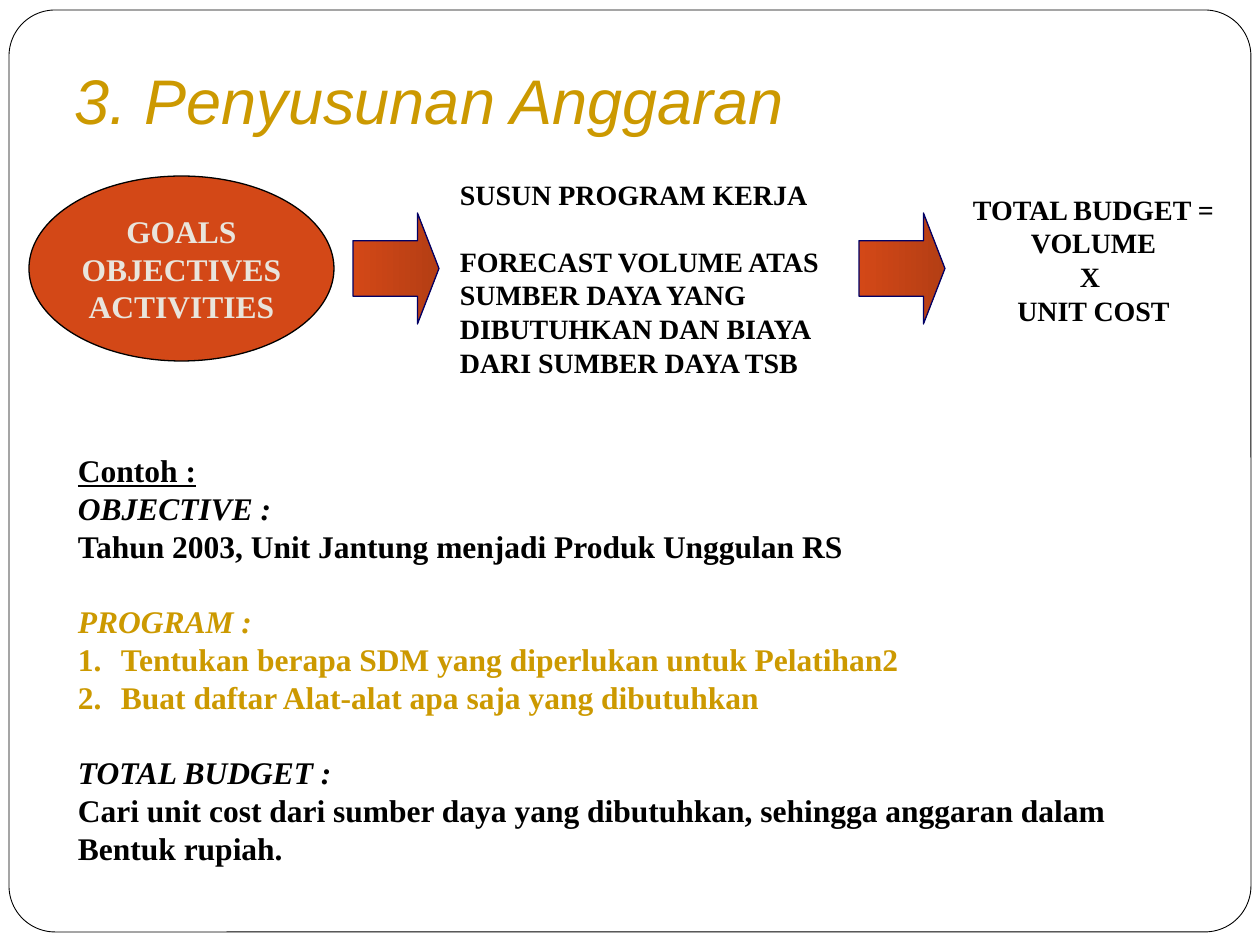
from pptx import Presentation
from pptx.dml.color import RGBColor
from pptx.enum.shapes import MSO_SHAPE
from pptx.enum.text import MSO_ANCHOR, PP_ALIGN
from pptx.util import Pt
from lxml.etree import SubElement
from pptx.oxml.ns import qn

PX = 914400 / 126
BLACK = RGBColor(0x00, 0x00, 0x00)
WHITE = RGBColor(0xFF, 0xFF, 0xFF)
GOLD = RGBColor(0xCC, 0x99, 0x00)
RUST = RGBColor(0xD3, 0x48, 0x17)
BROWN = RGBColor(0xB4, 0x3E, 0x14)
CREAM = RGBColor(0xE9, 0xE5, 0xDC)
NAVY = RGBColor(0x00, 0x00, 0x66)
SERIF = "Times New Roman"

# Content: each line is its text and the format that differs
TITLE = [("3. Penyusunan Anggaran", {"italic": True, "bold": False})]
GOALS = [("GOALS", {}), ("OBJECTIVES", {}), ("ACTIVITIES", {})]
WORK = [
    ("SUSUN PROGRAM KERJA", {}),
    ("FORECAST VOLUME ATAS", {"gap": 19.2}),
    ("SUMBER DAYA YANG", {}),
    ("DIBUTUHKAN DAN BIAYA", {}),
    ("DARI SUMBER DAYA TSB", {}),
]
BUDGET = [("TOTAL BUDGET =", {}), ("VOLUME", {}), ("X ", {}), ("UNIT COST", {})]
SAMPLE = [
    ("Contoh :", {"underline": True}),
    ("OBJECTIVE :", {"italic": True}),
    ("Tahun 2003, Unit Jantung menjadi Produk Unggulan RS", {}),
    ("PROGRAM :", {"italic": True, "color": GOLD, "gap": 21.6}),
    ("Tentukan berapa SDM yang diperlukan untuk Pelatihan2",
     {"color": GOLD, "number": True}),
    ("Buat daftar Alat-alat apa saja yang dibutuhkan",
     {"color": GOLD, "number": True}),
    ("TOTAL BUDGET :", {"italic": True, "gap": 21.6}),
    ("Cari unit cost dari sumber daya yang dibutuhkan, sehingga anggaran dalam", {}),
    ("Bentuk rupiah.", {}),
]
ARROWS = [353, 859]


def px(*values):
    return [round(v * PX) for v in values]


def write(frame, lines, size=18, font=SERIF, color=BLACK, align=PP_ALIGN.LEFT,
          anchor=MSO_ANCHOR.MIDDLE, wrap=True, bottom=6):
    frame.word_wrap = wrap
    frame.vertical_anchor = anchor
    frame.margin_left, frame.margin_right = px(12, 12)
    frame.margin_top, frame.margin_bottom = px(6, bottom)
    for i, (text, look) in enumerate(lines):
        para = frame.add_paragraph() if i else frame.paragraphs[0]
        para.alignment = align
        if "gap" in look:
            para.space_before = Pt(look["gap"])
        if look.get("number"):
            props = para._p.get_or_add_pPr()
            props.set("marL", str(px(43)[0]))
            props.set("indent", str(px(-43)[0]))
            SubElement(props, qn("a:buFont"), typeface="+mj-lt")
            SubElement(props, qn("a:buAutoNum"), type="arabicPeriod")
        run = para.add_run()
        run.text = text
        face = run.font
        face.name, face.size = font, Pt(size)
        face.bold = look.get("bold", True)
        face.italic = look.get("italic", False)
        face.underline = look.get("underline", False)
        face.color.rgb = look.get("color", color)


def draw(slide, kind, box, fill, line, width):
    shape = slide.shapes.add_shape(kind, *px(*box))
    shape.shadow.inherit = False
    shape.fill.solid()
    shape.fill.fore_color.rgb = fill
    shape.line.color.rgb = line
    shape.line.width = Pt(width)
    return shape


def note(slide, box, lines, **look):
    write(slide.shapes.add_textbox(*px(*box)).text_frame, lines, **look)


def main():
    deck = Presentation()
    deck.slide_width, deck.slide_height = px(1260, 945)
    slide = deck.slides.add_slide(deck.slide_layouts[6])

    # Frame and title
    frame = draw(slide, MSO_SHAPE.ROUNDED_RECTANGLE, (9, 10, 1242, 922),
                 WHITE, BLACK, 0.5)
    frame.adjustments[0] = 0.05
    note(slide, (63, -9, 1134, 158), TITLE, size=36, font="Arial", color=GOLD,
         anchor=MSO_ANCHOR.BOTTOM, bottom=12)

    # Flow from goals to budget
    oval = draw(slide, MSO_SHAPE.OVAL, (29, 176, 305, 185), RUST, BLACK, 0.75)
    write(oval.text_frame, GOALS, color=CREAM, align=PP_ALIGN.CENTER, wrap=False)
    for left in ARROWS:
        arrow = draw(slide, MSO_SHAPE.RIGHT_ARROW, (left, 213, 86, 111),
                     RUST, NAVY, 0.75)
        arrow.adjustments[0], arrow.adjustments[1] = 0.5, 0.25
        arrow.fill.gradient()
        arrow.fill.gradient_angle = 0
        for stop, color, place in zip(arrow.fill.gradient_stops,
                                      (RUST, BROWN), (0, 1)):
            stop.color.rgb, stop.position = color, place
    note(slide, (448, 102, 392, 352), WORK, size=16)
    note(slide, (955, 102, 277, 315), BUDGET, size=16, align=PP_ALIGN.CENTER)

    # Worked example
    note(slide, (66, 445, 1137, 428), SAMPLE)
    deck.save("out.pptx")


if __name__ == "__main__":
    main()
